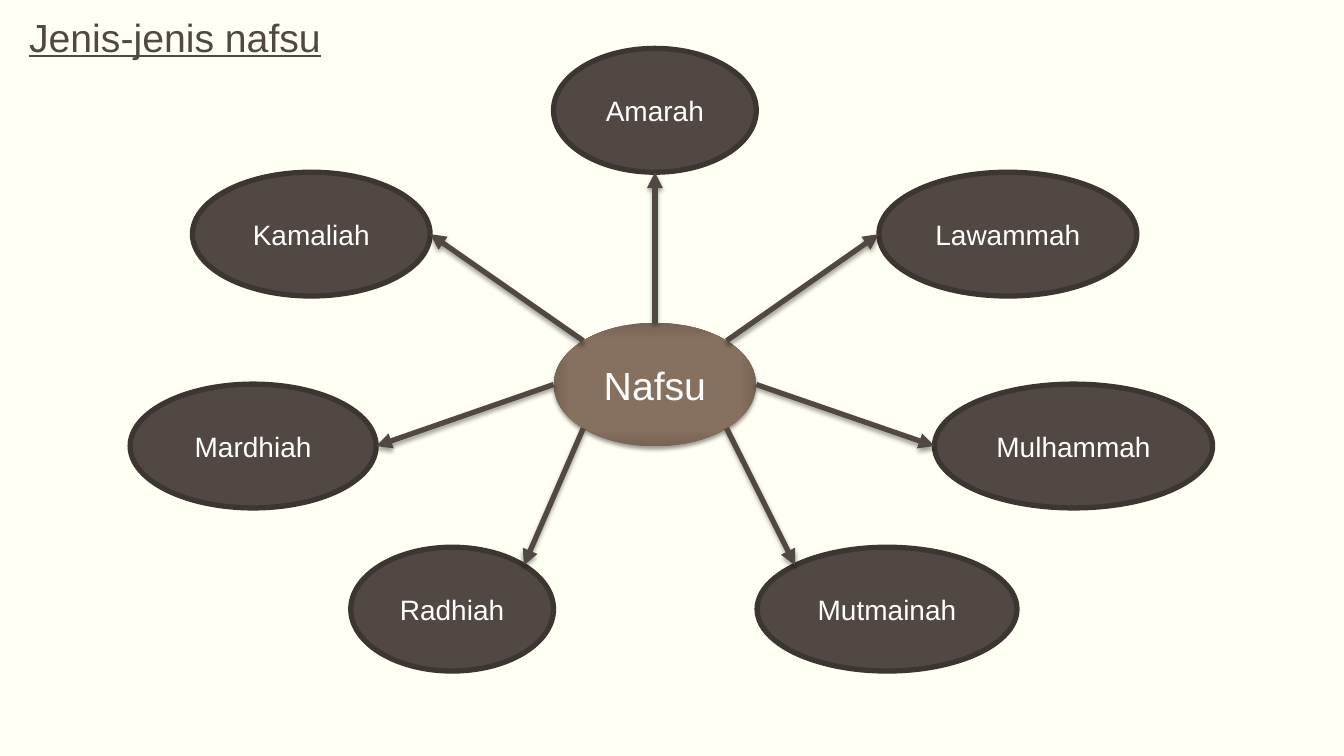
import math
from dataclasses import dataclass

from lxml import etree
from pptx import Presentation
from pptx.dml.color import RGBColor
from pptx.enum.shapes import MSO_CONNECTOR, MSO_SHAPE
from pptx.enum.text import MSO_ANCHOR, PP_ALIGN
from pptx.oxml import parse_xml
from pptx.oxml.ns import nsdecls, qn
from pptx.shapes.autoshape import Shape
from pptx.slide import Slide
from pptx.text.text import TextFrame
from pptx.util import Cm, Pt

ELLIPSE = MSO_SHAPE.OVAL
STRAIGHT = MSO_CONNECTOR.STRAIGHT
LEFT, CENTER = PP_ALIGN.LEFT, PP_ALIGN.CENTER
TOP, MIDDLE = MSO_ANCHOR.TOP, MSO_ANCHOR.MIDDLE

COLORS = {
    "background": "FFFFF3",
    "dark": "514843",
    "outline": "3C3532",
    "text": "FFFFFF",
    "shadow": "000000",
}
HUB_STOPS = {0: "877161", 71: "867060", 100: "776455"}
FONT = "Arial"
LINE_WIDTH = Pt(3.78)
HEIGHT = 3.12
EAST, SOUTHEAST, SOUTHWEST, WEST, NORTHWEST, NORTH, NORTHEAST = 0, 45, 135, 180, 225, 270, 315


@dataclass(frozen=True)
class Oval:
    label: str
    left: float
    top: float
    width: float

    def site(self, angle: float) -> tuple[int, int]:
        turn = math.radians(angle)
        x = self.left + self.width / 2 * (1 + math.cos(turn))
        y = self.top + HEIGHT / 2 * (1 + math.sin(turn))
        return Cm(x), Cm(y)


@dataclass(frozen=True)
class Branch:
    oval: Oval
    hub_angle: int
    oval_angle: int


HUB = Oval("Nafsu", 13.95, 8.13, 5.11)
BRANCHES = [
    Branch(Oval("Amarah", 13.95, 1.22, 5.11), NORTH, 90),
    Branch(Oval("Lawammah", 22.15, 4.34, 6.5), NORTHEAST, WEST),
    Branch(Oval("Mulhammah", 23.55, 9.68, 7.01), EAST, WEST),
    Branch(Oval("Mutmainah", 19.08, 13.79, 6.55), SOUTHEAST, NORTHWEST),
    Branch(Oval("Radhiah", 8.84, 13.79, 5.11), SOUTHWEST, NORTHEAST),
    Branch(Oval("Mardhiah", 3.28, 9.68, 6.2), WEST, EAST),
    Branch(Oval("Kamaliah", 4.85, 4.34, 5.99), NORTHWEST, EAST),
]


def rgb(name: str) -> RGBColor:
    return RGBColor.from_string(COLORS[name])


def write(frame: TextFrame, text: str, *, size: float, color: str = "text",
          align: PP_ALIGN = CENTER, anchor: MSO_ANCHOR = MIDDLE,
          underline: bool = False, spacing: float = 1.0) -> None:
    frame.word_wrap = True
    frame.vertical_anchor = anchor
    paragraph = frame.paragraphs[0]
    paragraph.alignment = align
    paragraph.line_spacing = spacing
    run = paragraph.add_run()
    run.text = text
    run.font.name = FONT
    run.font.size = Pt(size)
    run.font.underline = underline
    run.font.color.rgb = rgb(color)


def cast_shadow(properties: etree._Element, blur: float) -> None:
    for effects in properties.findall(qn("a:effectLst")):
        properties.remove(effects)
    properties.append(parse_xml(
        f'<a:effectLst {nsdecls("a")}>'
        f'<a:outerShdw blurRad="{Pt(blur)}" dist="{Pt(2)}" dir="5400000" rotWithShape="0">'
        f'<a:srgbClr val="{COLORS["shadow"]}"><a:alpha val="38000"/></a:srgbClr>'
        '</a:outerShdw></a:effectLst>'
    ))


def draw_oval(slide: Slide, oval: Oval, size: float) -> Shape:
    ellipse = slide.shapes.add_shape(
        ELLIPSE, Cm(oval.left), Cm(oval.top), Cm(oval.width), Cm(HEIGHT))
    ellipse.shadow.inherit = False
    write(ellipse.text_frame, oval.label, size=size)
    return ellipse


def draw_hub(slide: Slide) -> None:
    ellipse = draw_oval(slide, HUB, 28)
    ellipse.line.fill.background()
    properties = ellipse._element.spPr
    stops = "".join(
        f'<a:gs pos="{position * 1000}"><a:srgbClr val="{color}"/></a:gs>'
        for position, color in HUB_STOPS.items())
    properties.find(qn("a:prstGeom")).addnext(parse_xml(
        f'<a:gradFill {nsdecls("a")} rotWithShape="1"><a:gsLst>{stops}</a:gsLst>'
        '<a:path path="rect">'
        '<a:fillToRect l="50000" t="50000" r="50000" b="50000"/>'
        '</a:path></a:gradFill>'
    ))
    cast_shadow(properties, 3.1)


def draw_branch(slide: Slide, oval: Oval) -> None:
    ellipse = draw_oval(slide, oval, 20)
    ellipse.fill.solid()
    ellipse.fill.fore_color.rgb = rgb("dark")
    ellipse.line.color.rgb = rgb("outline")
    ellipse.line.width = LINE_WIDTH


def draw_arrow(slide: Slide, branch: Branch) -> None:
    arrow = slide.shapes.add_connector(
        STRAIGHT, *HUB.site(branch.hub_angle), *branch.oval.site(branch.oval_angle))
    arrow.line.color.rgb = rgb("dark")
    arrow.line.width = LINE_WIDTH
    properties = arrow._element.spPr
    etree.SubElement(properties.find(qn("a:ln")), qn("a:tailEnd"), type="triangle")
    cast_shadow(properties, 3.5)


def draw_title(slide: Slide) -> None:
    title = slide.shapes.title
    title.left, title.top, title.width, title.height = Cm(0.48), Cm(0.33), Cm(27.74), Cm(3.05)
    write(title.text_frame, "Jenis-jenis nafsu", size=28, color="dark",
          align=LEFT, anchor=TOP, underline=True, spacing=0.9)


def main() -> None:
    presentation = Presentation()
    presentation.slide_width, presentation.slide_height = Cm(33.87), Cm(19.05)
    slide = presentation.slides.add_slide(presentation.slide_layouts[5])
    slide.background.fill.solid()
    slide.background.fill.fore_color.rgb = rgb("background")
    draw_title(slide)
    draw_hub(slide)
    for branch in BRANCHES:
        draw_branch(slide, branch.oval)
    for branch in BRANCHES:
        draw_arrow(slide, branch)
    presentation.save("out.pptx")


if __name__ == "__main__":
    main()
